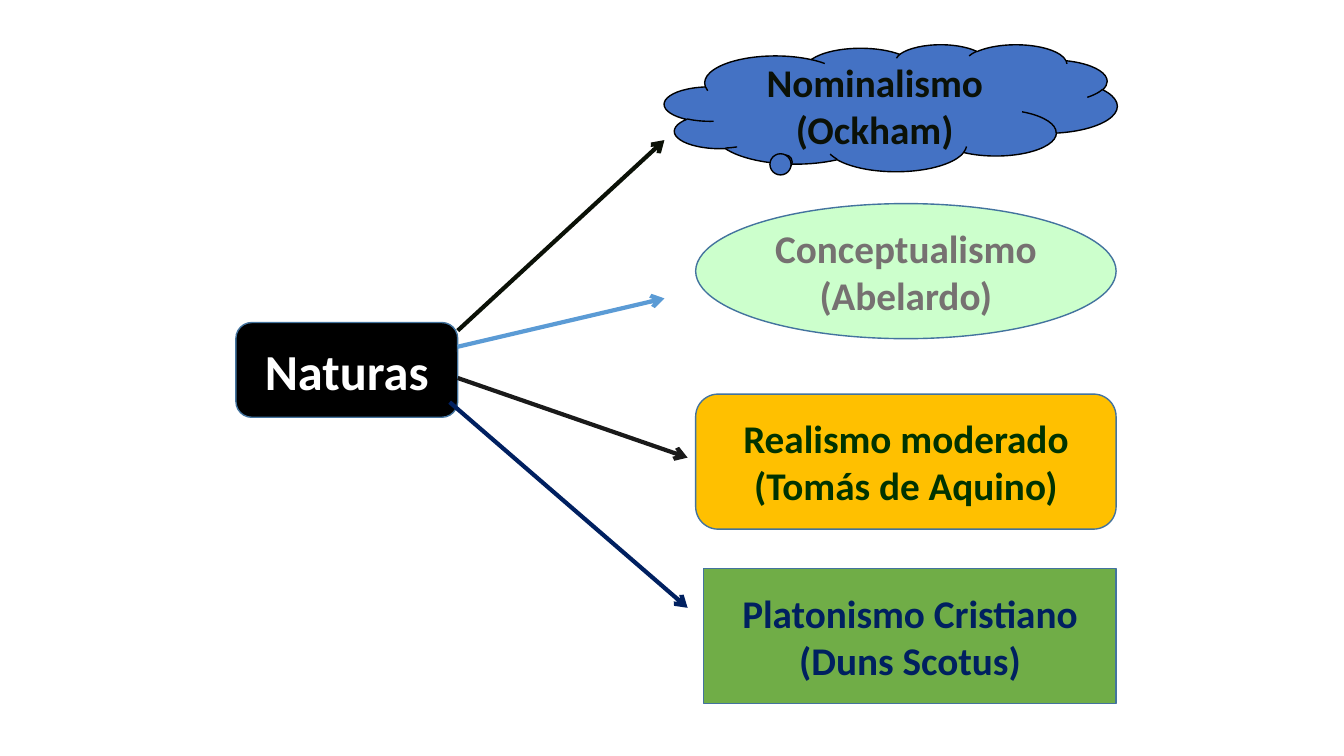
from lxml import etree
from pptx import Presentation
from pptx.dml.color import RGBColor
from pptx.enum.shapes import MSO_CONNECTOR, MSO_SHAPE
from pptx.enum.text import MSO_ANCHOR, PP_ALIGN
from pptx.oxml.ns import qn
from pptx.util import Inches, Pt

COLORS = {
    "black": "000000", "white": "FFFFFF", "edge": "43739E",
    "ink": "0B1107", "charcoal": "1A1A1A", "navy": "002060",
    "sky": "5B9BD5", "blue": "4472C4", "mint": "CCFFCC", "gray": "767171",
    "amber": "FFC000", "forest": "003300", "green": "70AD47",
}

# Shape, box (left, top, width, height), fill, outline, text colour, size, lines
ROOT = (MSO_SHAPE.ROUNDED_RECTANGLE, (2.34, 3.2, 2.2, 0.94),
        "black", "edge", "white", 36, ["Naturas"])

# Each theory with its arrow: start, end, colour
THEORIES = [
    ((MSO_SHAPE.CLOUD_CALLOUT, (6.59, 0.44, 4.49, 1.26),
      "blue", "black", "ink", 28, ["Nominalismo (Ockham)"]),
     ((4.54, 3.28), (6.59, 1.39), "ink")),
    ((MSO_SHAPE.OVAL, (6.9, 2.02, 4.17, 1.34),
      "mint", "edge", "gray", 28, ["Conceptualismo", "(Abelardo)"]),
     ((4.54, 3.44), (6.59, 2.96), "sky")),
    ((MSO_SHAPE.ROUNDED_RECTANGLE, (6.9, 3.91, 4.17, 1.34),
      "amber", "edge", "forest", 28, ["Realismo moderado", "(Tomás de Aquino)"]),
     ((4.54, 3.75), (6.82, 4.54), "charcoal")),
    ((MSO_SHAPE.RECTANGLE, (6.98, 5.64, 4.09, 1.34),
      "green", "edge", "navy", 28, ["Platonismo Cristiano", "(Duns Scotus)"]),
     ((4.46, 3.99), (6.82, 6.03), "navy")),
]
CLOUD_TAIL = (-0.237, 0.433)


def rgb(name):
    return RGBColor.from_string(COLORS[name])


def add_node(s, kind, box, fill, edge, color, size, lines):
    sp = s.shapes.add_shape(kind, *map(Inches, box))
    sp.shadow.inherit = False
    sp.fill.solid()
    sp.fill.fore_color.rgb = rgb(fill)
    sp.line.color.rgb = rgb(edge)
    sp.line.width = Pt(1)
    tf = sp.text_frame
    tf.word_wrap = True
    tf.vertical_anchor = MSO_ANCHOR.MIDDLE
    tf.text = "\n".join(lines)
    for p in tf.paragraphs:
        p.alignment = PP_ALIGN.CENTER
        p.font.name = "Calibri"
        p.font.size = Pt(size)
        p.font.bold = True
        p.font.color.rgb = rgb(color)
    return sp


def add_arrow(s, start, end, color):
    cx = s.shapes.add_connector(MSO_CONNECTOR.STRAIGHT, *map(Inches, start + end))
    cx.line.color.rgb = rgb(color)
    cx.line.width = Pt(3)
    etree.SubElement(cx.line._get_or_add_ln(), qn("a:tailEnd"), type="arrow")
    etree.SubElement(cx._element.spPr, qn("a:effectLst"))


prs = Presentation()
prs.slide_width, prs.slide_height = Inches(13.33), Inches(7.5)
s = prs.slides.add_slide(prs.slide_layouts[6])

# Root concept, then each arrow and its theory
add_node(s, *ROOT)
for node, arrow in THEORIES:
    add_arrow(s, *arrow)
    sp = add_node(s, *node)
    if node[0] == MSO_SHAPE.CLOUD_CALLOUT:
        for i, value in enumerate(CLOUD_TAIL):
            sp.adjustments[i] = value

prs.save("out.pptx")
